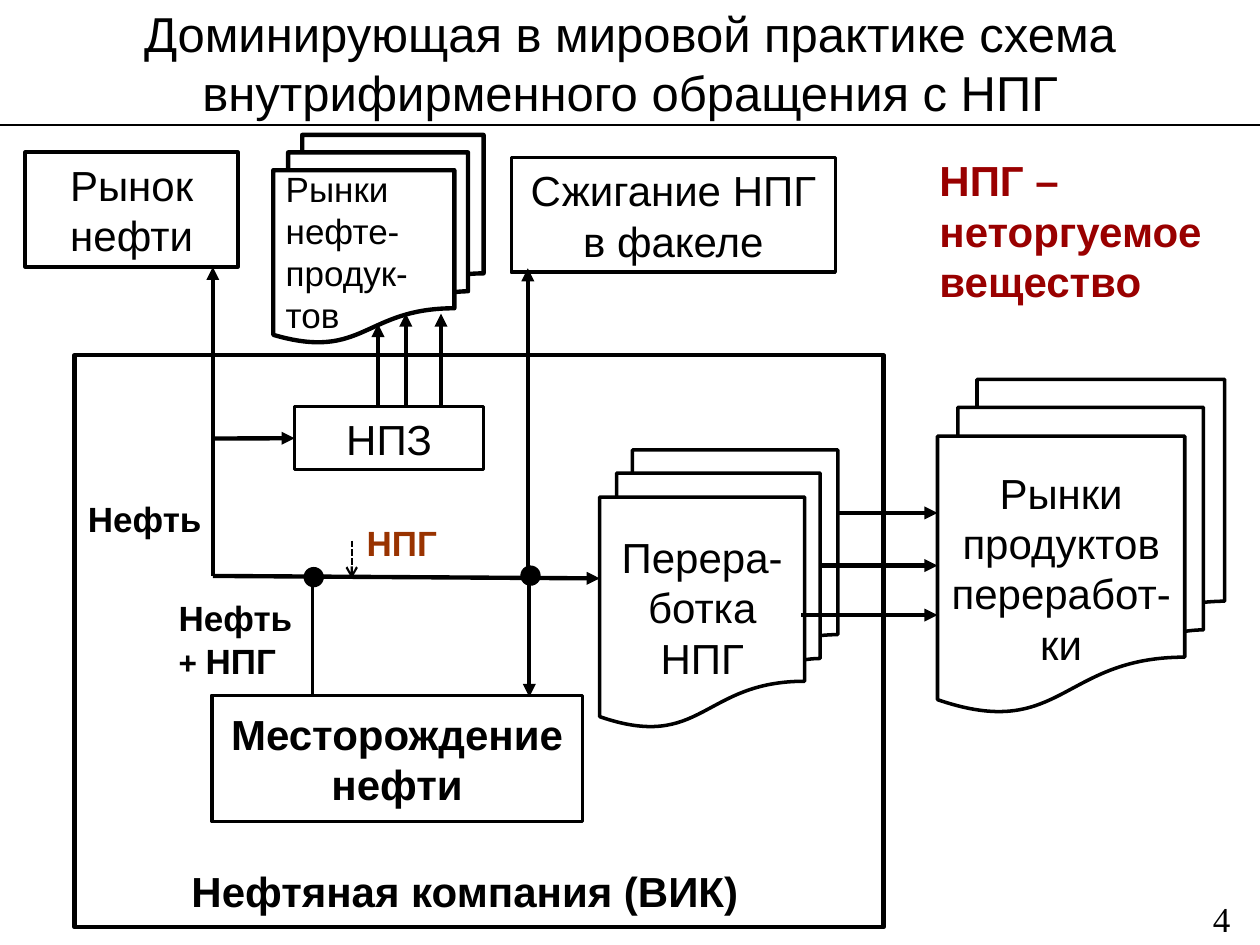
from dataclasses import dataclass

from lxml import etree
from pptx import Presentation
from pptx.dml.color import RGBColor
from pptx.enum.dml import MSO_LINE
from pptx.enum.shapes import MSO_CONNECTOR, MSO_SHAPE
from pptx.enum.text import MSO_ANCHOR, MSO_AUTO_SIZE, PP_ALIGN
from pptx.oxml.ns import qn
from pptx.util import Cm, Pt

STRAIGHT = MSO_CONNECTOR.STRAIGHT
RECTANGLE, STACK, DOT = MSO_SHAPE.RECTANGLE, MSO_SHAPE.FLOWCHART_MULTIDOCUMENT, MSO_SHAPE.FLOWCHART_CONNECTOR
TOP, MIDDLE, BOTTOM = MSO_ANCHOR.TOP, MSO_ANCHOR.MIDDLE, MSO_ANCHOR.BOTTOM
LEFT, CENTER = PP_ALIGN.LEFT, PP_ALIGN.CENTER
LEFT_SIDE = 1


@dataclass(frozen=True)
class Theme:
    black: RGBColor = RGBColor(0, 0, 0)
    white: RGBColor = RGBColor(255, 255, 255)
    brown: RGBColor = RGBColor(0x99, 0x33, 0x00)
    red: RGBColor = RGBColor(0x99, 0x00, 0x00)
    font: str = "Arial"
    number_font: str = "Times New Roman"
    title: int = 28
    large: int = 24
    label: int = 20
    plus: int = 18
    outline: float = 2
    flow: float = 2.5


THEME = Theme()

# All positions are in centimetres.
TITLE = "Доминирующая в мировой практике схема внутрифирменного обращения с НПГ"
TITLE_AREA = (0, 0, 25.4, 2.52)

# name: kind, (left, top, width, height), text, bold, filled, outline width
BOXES = {
    "company": (RECTANGLE, (1.5, 7.16, 16.31, 11.53), "Нефтяная компания (ВИК)", True, False, THEME.flow),
    "gas product markets": (STACK, (18.9, 7.65, 5.79, 6.71), "Рынки продуктов переработ-ки", False, True, THEME.outline),
    "gas processing": (STACK, (12.09, 9.07, 4.8, 5.59), "Перера-ботка НПГ", False, True, THEME.outline),
    "oil field": (RECTANGLE, (4.27, 14.02, 7.47, 2.54), "Месторождение нефти", True, False, THEME.outline),
    "oil market": (RECTANGLE, (0.51, 3.07, 4.29, 2.31), "Рынок нефти", False, False, THEME.outline),
    "refinery": (RECTANGLE, (5.94, 8.2, 3.81, 1.27), "НПЗ", False, True, THEME.outline),
    "flare": (RECTANGLE, (10.31, 3.18, 6.53, 2.31), "Сжигание НПГ в факеле", False, False, THEME.outline),
    "fuel markets": (STACK, (5.51, 2.72, 4.24, 4.19), "", False, False, THEME.flow),
}

# area, [(text, size), ...], colour, bold, font
LABELS = [
    ((3.35, 11.91, 2.9, 1.96), [("Нефть", THEME.label), (" + ", THEME.plus), ("НПГ", THEME.label)],
     THEME.black, True, THEME.font),
    ((1.52, 9.91, 2.9, 1.12), [("Нефть", THEME.label)], THEME.black, True, THEME.font),
    ((7.14, 10.39, 2.2, 1.12), [("НПГ", THEME.label)], THEME.brown, True, THEME.font),
    ((5.51, 3.25, 3, 3.68), [("Рынки\vнефте-\vпродук-\vтов", THEME.label)], THEME.black, False, THEME.font),
    ((18.69, 3, 6.65, 3.33), [("НПГ – неторгуемое\vвещество", THEME.large)], THEME.red, True, THEME.font),
    ((24.2, 17.96, 1.19, 1.09), [("4", THEME.label)], THEME.black, False, THEME.number_font),
]

OIL_X, FLARE_X, WELL_X = 4.29, 10.64, 6.3
TRUNK_Y, REFINERY_TOP, FIELD_TOP = 11.61, 8.2, 14.02
FLOWS = [
    ((OIL_X, TRUNK_Y), (OIL_X, 5.38)),
    ((OIL_X, TRUNK_Y), (12.09, 11.66)),
    ((FLARE_X, TRUNK_Y), (FLARE_X, 5.41)),
    ((10.67, 11.68), (10.67, 14.05)),
]
FLOWS += [((x, REFINERY_TOP), (x, end)) for x, end in [(7.62, 6.53), (8.18, 6.32), (8.89, 6.32)]]
FLOWS += [((x, y), (18.9, y)) for x, y in [(16.92, 10.34), (16.54, 11.4), (16.15, 12.4)]]

DOT_SIZE = 0.41
JUNCTIONS = [(10.49, 11.4), (6.12, 11.43)]


def lengths(values):
    return [Cm(value) for value in values]


def style_font(font, size, color=THEME.black, bold=False, name=THEME.font):
    font.size, font.bold, font.name = Pt(size), bold, name
    font.color.rgb = color


def add_box(slide, kind, area, text, bold, filled, width):
    box = slide.shapes.add_shape(kind, *lengths(area))
    box.shadow.inherit = False
    if filled:
        box.fill.solid()
        box.fill.fore_color.rgb = THEME.white
    else:
        box.fill.background()
    box.line.color.rgb = THEME.black
    box.line.width = Pt(width)
    if text:
        frame = box.text_frame
        frame.word_wrap = True
        frame.vertical_anchor = MIDDLE
        para = frame.paragraphs[0]
        para.text = text
        para.alignment = CENTER
        style_font(para.font, THEME.large, bold=bold)
    return box


def add_label(slide, area, spans, color, bold, font_name):
    frame = slide.shapes.add_textbox(*lengths(area)).text_frame
    frame.word_wrap = True
    frame.vertical_anchor = TOP
    para = frame.paragraphs[0]
    style_font(para.font, spans[0][1], color, bold, font_name)
    if len(spans) == 1:
        para.text = spans[0][0]
        return
    for text, size in spans:
        span = para.add_run()
        span.text = text
        style_font(span.font, size, color, bold, font_name)


def add_line(slide, start, end, width=THEME.flow, head="triangle"):
    line = slide.shapes.add_connector(STRAIGHT, *lengths(start + end))
    line.line.color.rgb = THEME.black
    line.line.width = Pt(width)
    if head:
        etree.SubElement(line.line._get_or_add_ln(), qn("a:tailEnd"), type=head)
    etree.SubElement(line._element.spPr, qn("a:effectLst"))
    return line


def add_title(slide):
    title = slide.shapes.title
    title.left, title.top, title.width, title.height = lengths(TITLE_AREA)
    frame = title.text_frame
    frame.word_wrap = True
    frame.auto_size = MSO_AUTO_SIZE.NONE
    frame.vertical_anchor = MIDDLE
    para = frame.paragraphs[0]
    para.text = TITLE
    para.alignment = CENTER
    para.space_before = Pt(12)
    style_font(para.font, THEME.title)


def main():
    deck = Presentation()
    deck.slide_width, deck.slide_height = Cm(25.4), Cm(19.05)
    slide = deck.slides.add_slide(deck.slide_layouts[5])
    add_title(slide)
    boxes = {name: add_box(slide, *box) for name, box in BOXES.items()}

    company = boxes["company"].text_frame
    company.vertical_anchor = BOTTOM
    company.margin_left, company.margin_bottom = Cm(2.36), Cm(0.22)
    company.paragraphs[0].alignment = LEFT

    add_line(slide, (0, 2.52), (25.4, 2.52), 0.75, None)
    for start, end in FLOWS:
        add_line(slide, start, end)
    add_line(slide, (WELL_X, FIELD_TOP), (WELL_X, 11.43), 2.25)
    to_refinery = add_line(slide, (OIL_X, 8.84), (5.94, 8.84))
    to_refinery.end_connect(boxes["refinery"], LEFT_SIDE)
    gas_pointer = add_line(slide, (7.09, 10.9), (7.09, 11.66), 1.25, "arrow")
    gas_pointer.line.dash_style = MSO_LINE.SQUARE_DOT

    for corner in JUNCTIONS:
        dot = slide.shapes.add_shape(DOT, *lengths(corner + (DOT_SIZE, DOT_SIZE)))
        dot.shadow.inherit = False
        dot.fill.solid()
        dot.fill.fore_color.rgb = THEME.black
        dot.line.fill.background()
    for label in LABELS:
        add_label(slide, *label)
    deck.save("out.pptx")


if __name__ == "__main__":
    main()
